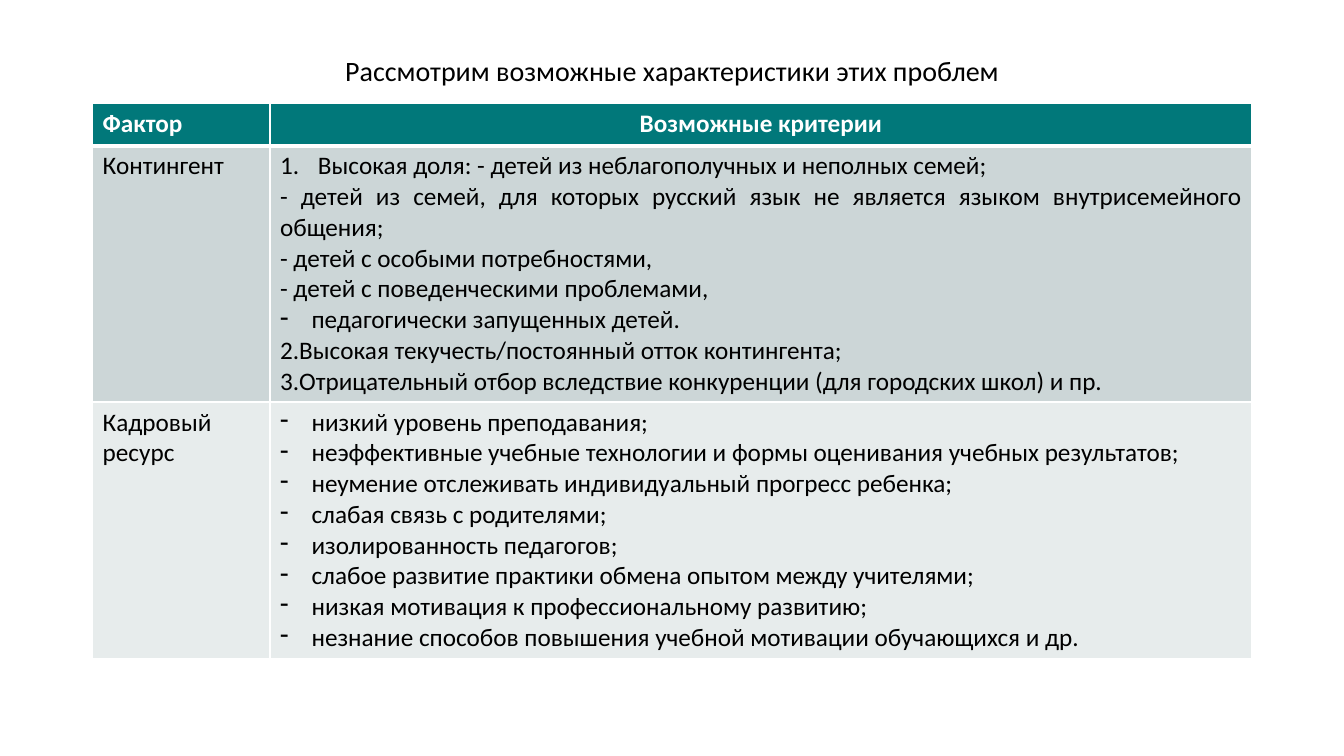
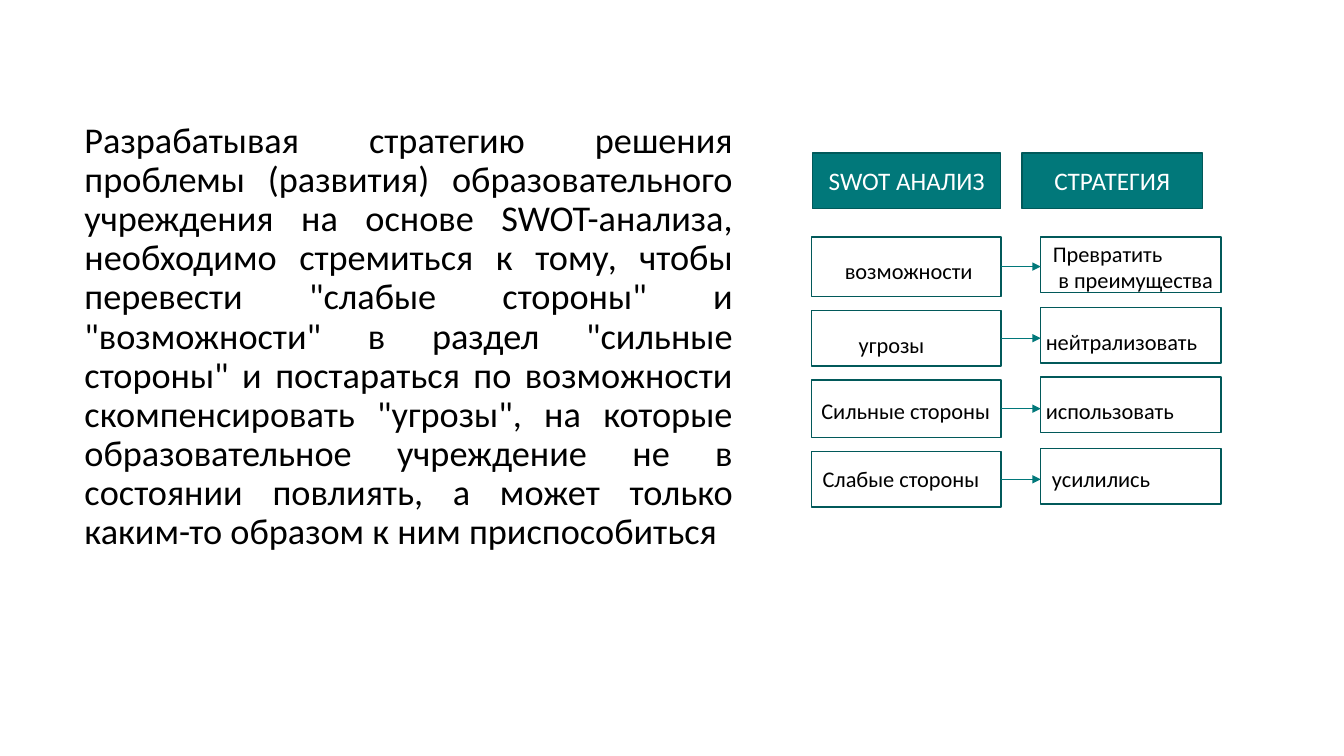
from dataclasses import dataclass

from lxml.etree import SubElement
from pptx import Presentation
from pptx.dml.color import RGBColor
from pptx.enum.shapes import MSO_CONNECTOR, MSO_SHAPE
from pptx.enum.text import MSO_ANCHOR, PP_ALIGN
from pptx.oxml.ns import qn
from pptx.util import Pt


@dataclass(frozen=True)
class Theme:
    font: str = "Calibri"
    black: str = "000000"
    white: str = "FFFFFF"
    teal: str = "01787A"
    edge: str = "01595A"
    bands: tuple = ("CCD6D7", "E7ECEC")
    title: float = 20
    body: float = 25.9
    cell: float = 18
    label: float = 16


THEME = Theme()

PEOPLE = (
    ("1.", "Высокая доля: - детей из неблагополучных и неполных семей;"),
    ("", "- детей из семей, для которых русский язык не является языком "
         "внутрисемейного общения;"),
    ("", "- детей с особыми потребностями,"),
    ("", "- детей с поведенческими проблемами,"),
    ("-", "педагогически запущенных детей."),
    ("", "2.Высокая текучесть/постоянный отток контингента;"),
    ("", "3.Отрицательный отбор вследствие конкуренции (для городских школ) и пр."),
)
STAFF = tuple(("-", text) for text in (
    "низкий уровень преподавания;",
    "неэффективные учебные технологии и формы оценивания учебных результатов;",
    "неумение отслеживать индивидуальный прогресс ребенка;",
    "слабая связь с родителями;",
    "изолированность педагогов;",
    "слабое развитие практики обмена опытом между учителями;",
    "низкая мотивация к профессиональному развитию;",
    "незнание способов повышения учебной мотивации обучающихся и др.",
))
FACTORS = (("Контингент", PEOPLE), ("Кадровый ресурс", STAFF))

ADVICE = (
    "Разрабатывая стратегию решения проблемы (развития) образовательного "
    "учреждения на основе SWOT-анализа, необходимо стремиться к тому, чтобы "
    "перевести \"слабые стороны\" и \"возможности\" в раздел \"сильные стороны\" "
    "и постараться по возможности скомпенсировать \"угрозы\", на которые "
    "образовательное учреждение не в состоянии повлиять, а может только "
    "каким-то образом к ним приспособиться"
)

# Each side: top, height, left inset, top inset, lines of text
PAIRS = (
    ((169.2, 42.5, 23.8, 14.4, ("возможности",)),
     (169.2, 39.6, 8.6, 2, ("Превратить", "в преимущества"))),
    ((221.8, 39.6, 33.8, 15, ("угрозы",)),
     (219.6, 39.6, 3.6, 15, ("нейтрализовать",))),
    ((271.4, 41, 7.2, 12, ("Сильные стороны",)),
     (269.3, 39.6, 3.6, 14.4, ("использовать",))),
    ((322.6, 39.6, 7.9, 9.4, ("Слабые стороны",)),
     (320.4, 39.6, 7.9, 11.5, ("усилились",))),
)


def color(code):
    return RGBColor.from_string(code)


def paint(target, code):
    target.fill.solid()
    target.fill.fore_color.rgb = color(code)


def style(para, size, code=THEME.black, align=PP_ALIGN.LEFT, bold=False):
    para.alignment = align
    font = para.font
    font.name, font.size, font.bold = THEME.font, Pt(size), bold
    font.color.rgb = color(code)


def bullet(para, mark):
    """Hang the paragraph on a dash or on automatic numbering."""
    numbered = mark == "1."
    indent = Pt(27 if numbered else 22.5)
    props = para._p.get_or_add_pPr()
    props.set("marL", str(indent))
    props.set("indent", str(-indent))
    if numbered:
        SubElement(props, qn("a:buAutoNum"), type="arabicPeriod")
    else:
        SubElement(props, qn("a:buChar"), char=mark)


def write(frame, items, size, **look):
    """Fill a frame with (mark, text) paragraphs in one style."""
    for i, (mark, text) in enumerate(items):
        para = frame.add_paragraph() if i else frame.paragraphs[0]
        para.text = text
        if mark:
            bullet(para, mark)
        style(para, size, **look)


def add_text(slide, area, text, size, align, anchor):
    frame = slide.shapes.add_textbox(*map(Pt, area)).text_frame
    frame.word_wrap = True
    frame.vertical_anchor = anchor
    write(frame, [("", text)], size, align=align)
    frame.paragraphs[0].line_spacing = 0.9


def border(cell, top=1, bottom=1):
    props = cell._tc.get_or_add_tcPr()
    for side, width in zip("LRTB", (1, 1, top, bottom)):
        line = SubElement(props, qn(f"a:ln{side}"), w=str(Pt(width)))
        fill = SubElement(line, qn("a:solidFill"))
        SubElement(fill, qn("a:srgbClr"), val=THEME.white)


def add_grid(slide):
    table = slide.shapes.add_table(3, 2, Pt(66.2), Pt(74.2), Pt(828), Pt(396)).table
    for column, width in zip(table.columns, (126.7, 701.3)):
        column.width = Pt(width)
    for row, height in zip(table.rows, (30, 183, 183)):
        row.height = Pt(height)

    heads = (("Фактор", PP_ALIGN.LEFT), ("Возможные критерии", PP_ALIGN.CENTER))
    for i, (text, align) in enumerate(heads):
        cell = table.cell(0, i)
        border(cell, bottom=3)
        paint(cell, THEME.teal)
        write(cell.text_frame, [("", text)], THEME.cell,
              code=THEME.white, align=align, bold=True)

    for r, (factor, points) in enumerate(FACTORS, 1):
        sides = (([("", factor)], PP_ALIGN.LEFT), (points, PP_ALIGN.JUSTIFY))
        for c, (items, align) in enumerate(sides):
            cell = table.cell(r, c)
            border(cell, top=3 if r == 1 else 1)
            paint(cell, THEME.bands[r - 1])
            write(cell.text_frame, items, THEME.cell, align=align)


def add_box(slide, area):
    box = slide.shapes.add_shape(MSO_SHAPE.RECTANGLE, *map(Pt, area))
    box.shadow.inherit = False
    box.line.color.rgb = color(THEME.edge)
    box.line.width = Pt(1)
    return box


def add_head(slide, left, width, text):
    box = add_box(slide, (left, 109.4, width, 39.6))
    paint(box, THEME.teal)
    frame = box.text_frame
    frame.vertical_anchor = MSO_ANCHOR.MIDDLE
    write(frame, [("", text)], THEME.cell, code=THEME.white, align=PP_ALIGN.CENTER)


def add_label(slide, left, width, side):
    top, height, inset, drop, lines = side
    box = add_box(slide, (left, top, width, height))
    box.fill.background()
    frame = box.text_frame
    frame.word_wrap = True
    frame.vertical_anchor = MSO_ANCHOR.TOP
    frame.margin_left, frame.margin_top = Pt(inset), Pt(drop)
    frame.margin_right = frame.margin_bottom = 0
    write(frame, [("", line) for line in lines], THEME.label)
    for para in frame.paragraphs[1:]:
        para._p.get_or_add_pPr().set("marL", str(Pt(4)))
    return box


def add_arrow(slide, box, end):
    """Draw a level arrow from the middle of a box's right side."""
    level = box.top + box.height // 2
    arrow = slide.shapes.add_connector(
        MSO_CONNECTOR.STRAIGHT, box.left + box.width, level, end, level)
    arrow.begin_connect(box, 3)
    arrow.line.color.rgb = color(THEME.teal)
    arrow.line.width = Pt(0.5)
    SubElement(arrow.line._get_or_add_ln(), qn("a:tailEnd"), type="triangle")
    SubElement(arrow._element.spPr, qn("a:effectLst"))


def add_swot(slide):
    add_head(slide, 580.3, 134.6, "SWOT АНАЛИЗ")
    add_head(slide, 730, 128.9, "СТРАТЕГИЯ")
    for start, goal in PAIRS:
        source = add_label(slide, 579.6, 135.4, start)
        target = add_label(slide, 743.4, 128.9, goal)
        add_arrow(slide, source, target.left)


def main():
    deck = Presentation()
    deck.slide_width, deck.slide_height = Pt(960), Pt(540)
    blank = deck.slide_layouts[6]

    slide = deck.slides.add_slide(blank)
    add_text(slide, (66.2, 28.8, 828, 45.4),
             "Рассмотрим возможные характеристики этих проблем",
             THEME.title, PP_ALIGN.CENTER, MSO_ANCHOR.MIDDLE)
    add_grid(slide)

    slide = deck.slides.add_slide(blank)
    add_text(slide, (53.3, 83.5, 477.4, 342.7), ADVICE,
             THEME.body, PP_ALIGN.JUSTIFY, MSO_ANCHOR.TOP)
    add_swot(slide)

    deck.save("out.pptx")


if __name__ == "__main__":
    main()
